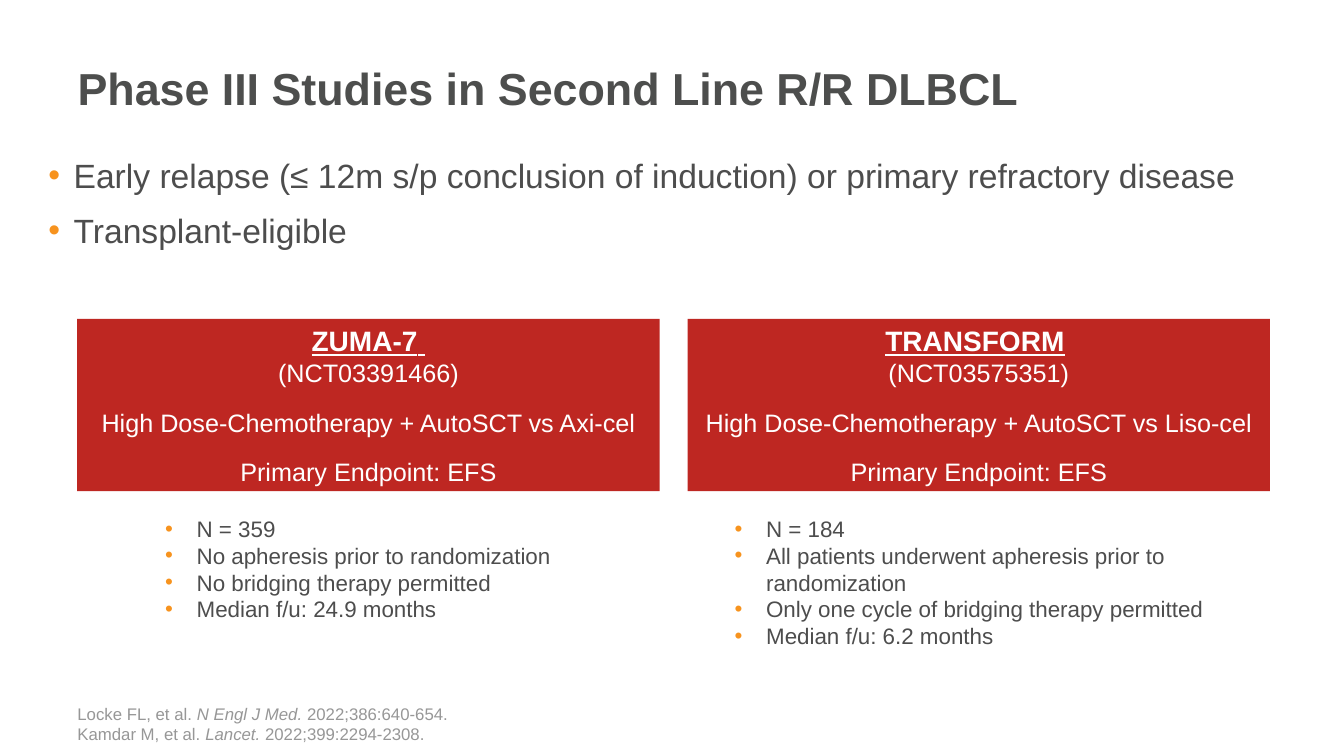
from lxml.etree import SubElement
from pptx import Presentation
from pptx.dml.color import RGBColor
from pptx.enum.shapes import MSO_SHAPE
from pptx.enum.text import MSO_ANCHOR, PP_ALIGN
from pptx.oxml.ns import qn
from pptx.util import Pt

COLORS = {"title": "4D4E4D", "body": "4D4D4D", "bullet": "F7931E",
          "card": "BE2722", "card_text": "FFFFFF", "reference": "979797"}
FONT = "Arial"
CRITERIA = ["Early relapse (≤ 12m s/p conclusion of induction) or primary refractory disease",
            "Transplant-eligible"]
STUDIES = [
    {"name": "ZUMA-7", "underline_space": True, "trial": "(NCT03391466)",
     "arms": "High Dose-Chemotherapy + AutoSCT vs Axi-cel",
     "notes_box": (110.9, 364.3, 303.1, 85),
     "notes": ["N = 359", "No apheresis prior to randomization",
               "No bridging therapy permitted", "Median f/u: 24.9 months"]},
    {"name": "TRANSFORM", "underline_space": False, "trial": "(NCT03575351)",
     "arms": "High Dose-Chemotherapy + AutoSCT vs Liso-cel",
     "notes_box": (517.7, 364.3, 401, 104.4),
     "notes": ["N = 184", "All patients underwent apheresis prior to randomization",
               "Only one cycle of bridging therapy permitted", "Median f/u: 6.2 months"]},
]
REFERENCES = [("Locke FL, et al. ", "N Engl J Med. ", "2022;386:640-654."),
              ("Kamdar M, et al. ", "Lancet. ", "2022;399:2294-2308.")]


def rgb(name):
    """Return the named colour."""
    return RGBColor.from_string(COLORS[name])


def add_run(p, text, size, color, bold=False, italic=False, underline=False):
    """Add one formatted run to a paragraph."""
    r = p.add_run()
    r.text = text
    r.font.name, r.font.size = FONT, Pt(size)
    r.font.bold, r.font.italic, r.font.underline = bold, italic, underline
    r.font.color.rgb = rgb(color)


def next_paragraph(tf, index):
    """Return the first paragraph for index zero, else a new one."""
    return tf.add_paragraph() if index else tf.paragraphs[0]


def add_text_frame(s, box):
    """Add a wrapping text box and return its text frame."""
    tf = s.shapes.add_textbox(*map(Pt, box)).text_frame
    tf.word_wrap = True
    return tf


def add_title(s, box, text):
    """Place and format the title placeholder."""
    sp = s.shapes.title
    sp.left, sp.top, sp.width, sp.height = map(Pt, box)
    tf = sp.text_frame
    tf.vertical_anchor = MSO_ANCHOR.MIDDLE
    p = tf.paragraphs[0]
    p.alignment = PP_ALIGN.LEFT
    add_run(p, text, 32, "title", bold=True)


def add_bullets(s, box, items, size, indent, gap=0, inset=None, align=PP_ALIGN.LEFT):
    """Add a bulleted list in the given box."""
    tf = add_text_frame(s, box)
    if inset is not None:
        tf.margin_left = tf.margin_right = tf.margin_top = tf.margin_bottom = Pt(inset)
    for i, item in enumerate(items):
        p = next_paragraph(tf, i)
        p.alignment = align
        if i and gap:
            p.space_before = Pt(gap)
        pPr = p._p.get_or_add_pPr()
        pPr.set("marL", str(Pt(indent)))
        pPr.set("indent", str(-Pt(indent)))
        color = SubElement(pPr, qn("a:buClr"))
        SubElement(color, qn("a:srgbClr"), val=COLORS["bullet"])
        SubElement(pPr, qn("a:buFont"), typeface=FONT)
        SubElement(pPr, qn("a:buChar"), char="•")
        add_run(p, item, size, "body")


def add_study(s, box, study):
    """Add a study card with its notes below."""
    sp = s.shapes.add_shape(MSO_SHAPE.RECTANGLE, *map(Pt, box))
    sp.shadow.inherit = False
    sp.fill.solid()
    sp.fill.fore_color.rgb = rgb("card")
    sp.line.fill.background()
    tf = sp.text_frame
    tf.word_wrap = True
    tf.vertical_anchor = MSO_ANCHOR.TOP
    p = tf.paragraphs[0]
    p.alignment = PP_ALIGN.CENTER
    add_run(p, study["name"], 20, "card_text", bold=True, underline=True)
    add_run(p, " ", 20, "card_text", underline=study["underline_space"])
    lines = [(study["trial"], 0), (study["arms"], 14), ("Primary Endpoint: EFS", 13.5)]
    for text, gap in lines:
        p = tf.add_paragraph()
        p.alignment = PP_ALIGN.CENTER
        p.space_before = Pt(gap)
        add_run(p, text, 18, "card_text")
    add_bullets(s, study["notes_box"], study["notes"], 16, 22.5)


def add_references(s, box):
    """Add the citations at the foot of the slide."""
    tf = add_text_frame(s, box)
    tf.vertical_anchor = MSO_ANCHOR.BOTTOM
    for i, (authors, journal, issue) in enumerate(REFERENCES):
        p = next_paragraph(tf, i)
        add_run(p, authors, 12, "reference")
        add_run(p, journal, 12, "reference", italic=True)
        add_run(p, issue, 12, "reference")


def main():
    """Build and save the slide."""
    prs = Presentation()
    prs.slide_width, prs.slide_height = Pt(960), Pt(540)
    s = prs.slides.add_slide(prs.slide_layouts[5])
    left, width = 48.2, 846
    add_title(s, (left, 15.8, width, 93.6), "Phase III Studies in Second Line R/R DLBCL")
    add_bullets(s, (25.2, 101.5, 894.2, 136), CRITERIA, 24, 18,
                gap=10, inset=9.4, align=PP_ALIGN.JUSTIFY)
    card_left, card_width, card_gap = 55.2, 416, 20
    for i, study in enumerate(STUDIES):
        x = card_left + i * (card_width + card_gap)
        add_study(s, (x, 227.8, card_width, 123), study)
    add_references(s, (left, 500.4, width, 34.6))
    prs.save("out.pptx")


if __name__ == "__main__":
    main()
